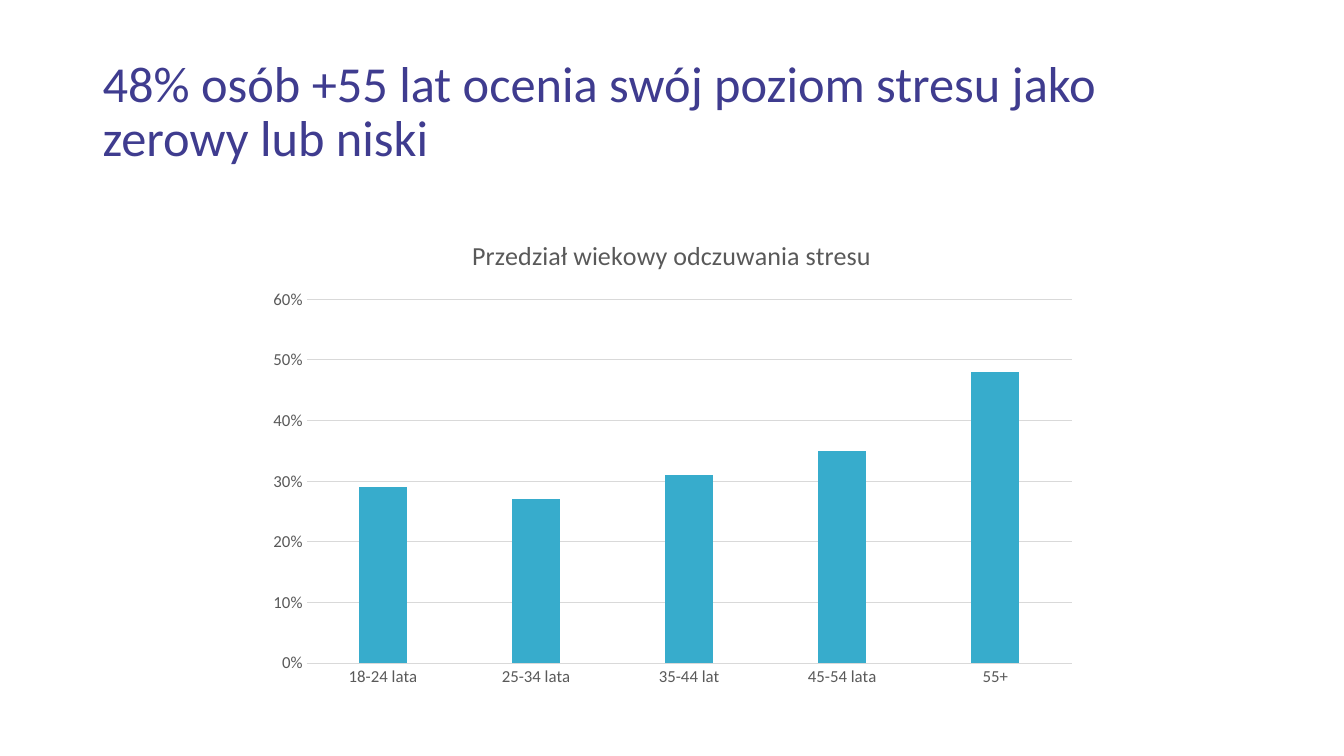
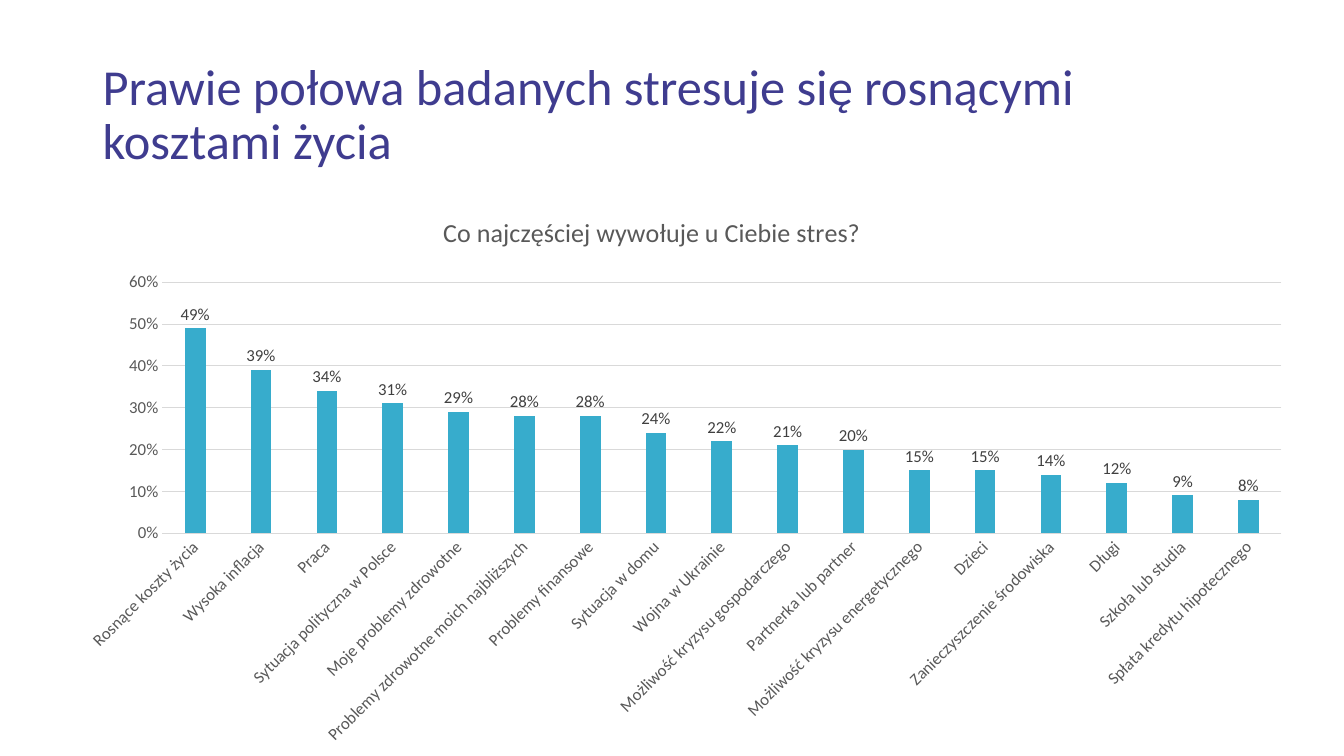
import pptx
import pptx.chart.data
import pptx.dml.color
import pptx.enum.chart
import pptx.enum.text
import pptx.oxml
import pptx.oxml.ns
import pptx.util

Inches, Pt = pptx.util.Inches, pptx.util.Pt
RGBColor = pptx.dml.color.RGBColor
XL = pptx.enum.chart

INDIGO = RGBColor(0x3F, 0x3C, 0x8F)
TEAL = RGBColor(0x37, 0xAC, 0xCC)
GREY = RGBColor(0x59, 0x59, 0x59)
DARK = RGBColor(0x40, 0x40, 0x40)
RULE = RGBColor(0xD9, 0xD9, 0xD9)
FONT = "Calibri"

SLIDES = [
    {
        "title": "48% osób +55 lat ocenia swój poziom stresu jako zerowy lub niski",
        "title_top": 0.4,
        "chart_title": "Przedział wiekowy odczuwania stresu",
        "series": "Przedział wiekowy odczuwania stresu",
        "box": (2.54, 2.16, 8.25, 4.76),
        "plot": (3.04, 2.97, 7.59, 3.61),
        "format": "0%",
        "data": [
            ("18-24 lata", 0.29),
            ("25-34 lata", 0.27),
            ("35-44 lat", 0.31),
            ("45-54 lata", 0.35),
            ("55+", 0.48),
        ],
    },
    {
        "title": "Prawie połowa badanych stresuje się rosnącymi kosztami życia",
        "title_top": 0.43,
        "chart_title": "Co najczęściej wywołuje u Ciebie stres?",
        "chart_title_at": (4.35, 2.08),
        "series": "Series 1",
        "box": (0.63, 2, 12.32, 5.5),
        "plot": (1.61, 2.8, 11.1, 2.49),
        "format": "###0%",
        "labels": True,
        "rotation": -45,
        "data": [
            ("Rosnące koszty życia", 0.49),
            ("Wysoka inflacja", 0.39),
            ("Praca", 0.34),
            ("Sytuacja polityczna w Polsce", 0.31),
            ("Moje problemy zdrowotne", 0.29),
            ("Problemy zdrowotne moich najbliższych", 0.28),
            ("Problemy finansowe", 0.28),
            ("Sytuacja w domu", 0.24),
            ("Wojna w Ukrainie", 0.22),
            ("Możliwość kryzysu gospodarczego", 0.21),
            ("Partnerka lub partner", 0.2),
            ("Możliwość kryzysu energetycznego", 0.15),
            ("Dzieci", 0.15),
            ("Zanieczyszczenie środowiska", 0.14),
            ("Długi", 0.12),
            ("Szkoła lub studia", 0.09),
            ("Spłata kredytu hipotecznego", 0.08),
        ],
    },
]


def set_font(font, size, color):
    for name, value in {"name": FONT, "size": Pt(size), "bold": False}.items():
        setattr(font, name, value)
    font.color.rgb = color


def set_line(fmt):
    fmt.line.color.rgb = RULE
    fmt.line.width = Pt(0.75)


def place(parent, index, box, area):
    left, top, width, height = box
    parts = [("x", (area[0] - left) / width), ("y", (area[1] - top) / height)]
    target = ""
    if len(area) == 4:
        parts += [("w", area[2] / width), ("h", area[3] / height)]
        target = '<c:layoutTarget val="inner"/>'
    modes = "".join(f'<c:{k}Mode val="edge"/>' for k, _ in parts[:2])
    values = "".join(f'<c:{k} val="{v:.4f}"/>' for k, v in parts)
    for old in parent.xpath("c:layout"):
        parent.remove(old)
    parent.insert(index, pptx.oxml.parse_xml(
        f'<c:layout {pptx.oxml.ns.nsdecls("c")}><c:manualLayout>'
        f"{target}{modes}{values}</c:manualLayout></c:layout>"))


def add_title(s, text, top):
    tf = s.shapes.add_textbox(
        Inches(0.92), Inches(top), Inches(11.5), Inches(1.45)).text_frame
    tf.word_wrap = True
    tf.vertical_anchor = pptx.enum.text.MSO_ANCHOR.MIDDLE
    p = tf.paragraphs[0]
    p.line_spacing = 0.9
    r = p.add_run()
    r.text = text
    set_font(r.font, 36, INDIGO)


def add_column_chart(s, item):
    box = item["box"]
    data = pptx.chart.data.CategoryChartData(number_format=item["format"])
    data.categories = [name for name, _ in item["data"]]
    data.add_series(item["series"], [value for _, value in item["data"]])
    chart = s.shapes.add_chart(
        XL.XL_CHART_TYPE.COLUMN_CLUSTERED, *map(Inches, box), data).chart
    set_font(chart.font, 10, RGBColor(0, 0, 0))
    chart.has_legend = False

    chart.has_title = True
    p = chart.chart_title.text_frame.paragraphs[0]
    r = p.add_run()
    r.text = item["chart_title"]
    set_font(r.font, 18.6, GREY)
    chart.chart_title.include_in_layout = False
    root = chart._chartSpace
    if "chart_title_at" in item:
        place(root.xpath("c:chart/c:title")[0], 1, box, item["chart_title_at"])
    place(root.xpath("c:chart/c:plotArea")[0], 0, box, item["plot"])

    for axis in (chart.category_axis, chart.value_axis):
        set_font(axis.tick_labels.font, 12, GREY)
        axis.major_tick_mark = axis.minor_tick_mark = XL.XL_TICK_MARK.NONE
    set_line(chart.category_axis.format)
    if "rotation" in item:
        body = root.xpath("c:chart/c:plotArea/c:catAx/c:txPr/a:bodyPr")[0]
        body.set("rot", str(item["rotation"] * 60000))
        body.set("vert", "horz")

    axis = chart.value_axis
    axis.minimum_scale, axis.maximum_scale, axis.major_unit = 0, 0.6, 0.1
    axis.format.line.fill.background()
    axis.has_major_gridlines = True
    set_line(axis.major_gridlines.format)
    axis.tick_labels.number_format = item["format"]
    axis.tick_labels.number_format_is_linked = False

    plot = chart.plots[0]
    plot.gap_width, plot.overlap, plot.vary_by_categories = 219, -27, False
    fill = plot.series[0].format.fill
    fill.solid()
    fill.fore_color.rgb = TEAL
    if item.get("labels"):
        labels = plot.series[0].data_labels
        for name, value in {
            "show_value": True,
            "position": XL.XL_LABEL_POSITION.OUTSIDE_END,
            "number_format": item["format"],
            "number_format_is_linked": False,
        }.items():
            setattr(labels, name, value)
        set_font(labels.font, 12, DARK)


def main():
    prs = pptx.Presentation()
    prs.slide_width, prs.slide_height = Inches(13.33), Inches(7.5)
    for item in SLIDES:
        s = prs.slides.add_slide(prs.slide_layouts[6])
        add_title(s, item["title"], item["title_top"])
        add_column_chart(s, item)
    prs.save("out.pptx")


if __name__ == "__main__":
    main()
